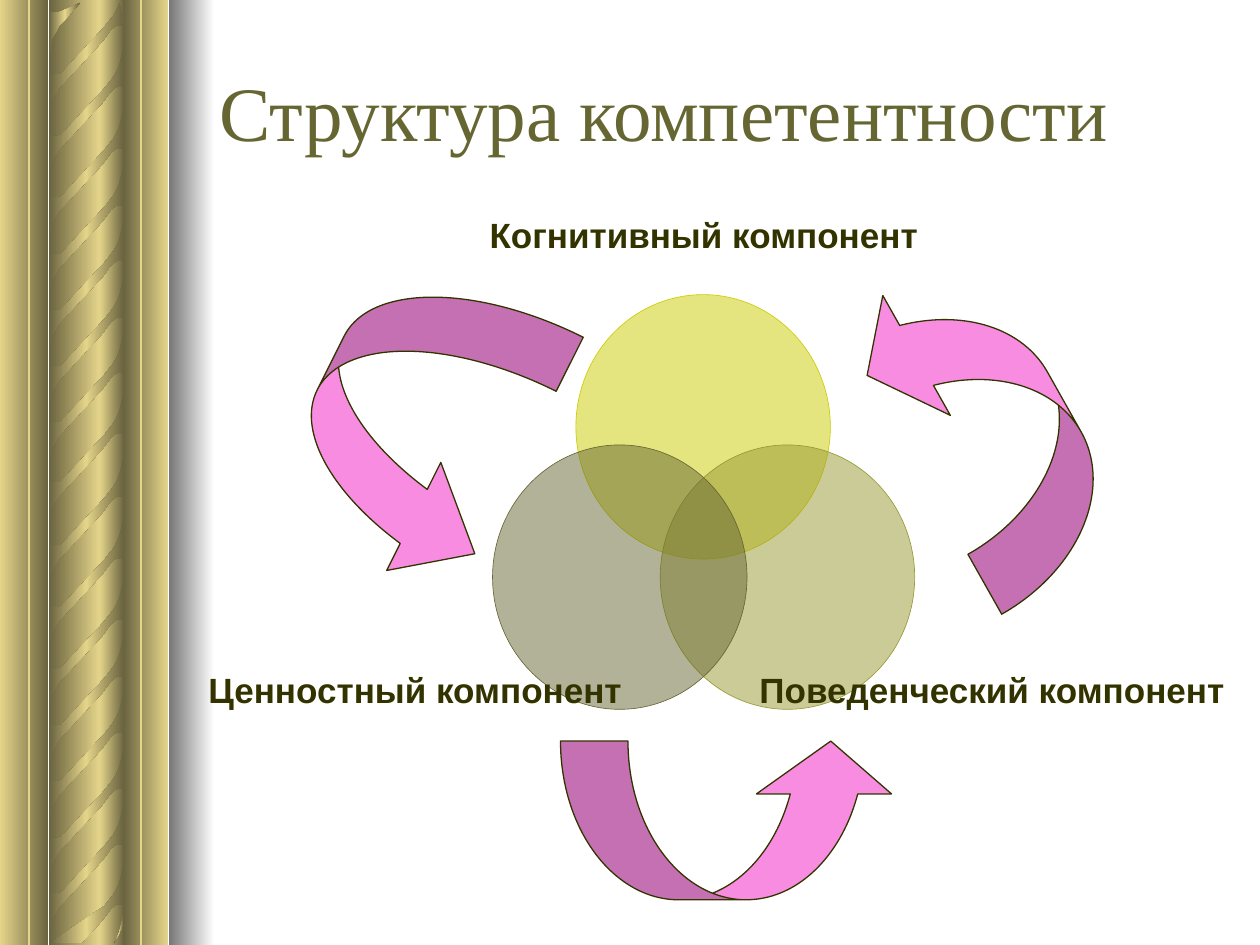
from copy import deepcopy

from lxml import etree
from pptx import Presentation
from pptx.dml.color import RGBColor
from pptx.enum.shapes import MSO_CONNECTOR, MSO_SHAPE
from pptx.enum.text import MSO_ANCHOR, PP_ALIGN
from pptx.oxml.ns import qn
from pptx.util import Cm, Pt

RECTANGLE, ELLIPSE = MSO_SHAPE.RECTANGLE, MSO_SHAPE.OVAL
ARROW_UP, ARROW_RIGHT = MSO_SHAPE.CURVED_UP_ARROW, MSO_SHAPE.CURVED_RIGHT_ARROW
STRAIGHT = MSO_CONNECTOR.STRAIGHT
MIDDLE = MSO_ANCHOR.MIDDLE
LEFT, CENTER = PP_ALIGN.LEFT, PP_ALIGN.CENTER

COLORS = {
    "gold": "E5D58A", "bronze": "6A6340", "shade": "767676", "white": "FFFFFF",
    "title": "666633", "ink": "333300", "pink": "F88CE1",
    "lemon": "CCCC00", "olive": "999933", "moss": "666633",
}
SLIDE_WIDTH, SLIDE_HEIGHT = 25.4, 19.05

# Outline of one rope strand, in cm from its top left corner
STRAND = [
    (1.5, 0.23), (1.5, 0.84), (1.47, 0.81), (1.37, 0.81), (1.32, 0.84),
    (1.24, 0.91), (1.07, 1.14), (0.64, 1.6), (0.2, 2.08), (0.13, 2.21),
    (0.05, 2.36), (0.03, 2.57), (0, 2.84), (0, 1.6), (0, 1.73), (0.03, 1.78),
    (0.08, 1.8), (0.13, 1.8), (0.18, 1.8), (0.25, 1.78), (1.12, 0.84),
    (1.3, 0.61), (1.37, 0.48), (1.42, 0.36), (1.47, 0.15), (1.5, 0),
]
HALF_TOPS = [-0.3, 0.94, 2.18, 3.33, 4.45, 5.59, 6.71, 7.92]
STRAND_TOPS = [-1.55] + HALF_TOPS + [top + 9.5 for top in HALF_TOPS] + [18.42]


def color(name):
    return RGBColor.from_string(COLORS[name])


def set_gradient(shape, *names):
    """Fill with a left-to-right gradient of two or three evenly spaced colours."""
    shape.shadow.inherit = False
    shape.line.fill.background()
    shape.fill.gradient()
    shape.fill.gradient_angle = 0
    stop_list = shape.fill.gradient_stops[0]._gs.getparent()
    if len(names) == 3:
        stop_list.insert(1, deepcopy(stop_list[0]))
    for index, (stop, name) in enumerate(zip(shape.fill.gradient_stops, names)):
        stop.color.rgb = color(name)
        stop.position = index / (len(names) - 1)


def add_filled(slide, kind, box, fill, line, line_width):
    shape = slide.shapes.add_shape(kind, *(Cm(length) for length in box))
    shape.shadow.inherit = False
    shape.fill.solid()
    shape.fill.fore_color.rgb = color(fill)
    shape.line.color.rgb = color(line)
    shape.line.width = Pt(line_width)
    return shape


def add_text(slide, box, text, *, size, font, ink, bold=False, align=LEFT,
             wrap=True, margins=(0, 0)):
    """Add one line of text; without wrap it may run past both sides of its box."""
    shape = slide.shapes.add_shape(RECTANGLE, *(Cm(length) for length in box))
    shape.shadow.inherit = False
    shape.fill.background()
    shape.line.fill.background()
    frame = shape.text_frame
    frame.word_wrap = wrap
    frame.vertical_anchor = MIDDLE
    frame.margin_left = frame.margin_right = Cm(margins[0])
    frame.margin_top = frame.margin_bottom = Cm(margins[1])
    paragraph = frame.paragraphs[0]
    paragraph.alignment = align
    run = paragraph.add_run()
    run.text = text
    run.font.size = Pt(size)
    run.font.name = font
    run.font.bold = bold
    run.font.color.rgb = color(ink)


def add_strand(slide, left, top, lowest, highest):
    """Draw the part of one strand that lies within the column."""
    points = [(Cm(left + x), Cm(top + y)) for x, y in STRAND
              if lowest <= top + y <= highest]
    builder = slide.shapes.build_freeform(*points[0], scale=1.0)
    builder.add_line_segments(points[1:], close=True)
    set_gradient(builder.convert_to_shape(), "bronze", "gold", "bronze")


def add_column(slide, left, top, height):
    bands = [
        (2.01, 0.5, "gold", "bronze"), (0, 0.97, "gold", "bronze"),
        (0.99, 1.02, "bronze", "gold"), (2.49, 0.9, "bronze", "gold"),
        (3.4, 0.92, "shade", "white"),
    ]
    for offset, width, start, end in bands:
        band = slide.shapes.add_shape(
            RECTANGLE, Cm(left + offset), Cm(top), Cm(width), Cm(height))
        set_gradient(band, start, end)
    for strand_top in STRAND_TOPS:
        add_strand(slide, left + 0.99, top + strand_top, top, top + height)
    for offset in (0.58, 2.84):
        x = Cm(left + offset)
        groove = slide.shapes.add_connector(STRAIGHT, x, Cm(top), x, Cm(top + height))
        groove.line.color.rgb = color("gold")
        groove.line.width = Pt(1)
        etree.SubElement(groove._element.spPr, qn("a:effectLst"))


def add_venn(slide, left, top):
    components = [
        ("Когнитивный компонент", "lemon", (4.7, 1.88), (5.82, 0)),
        ("Поведенческий компонент", "olive", (6.4, 4.91), (11.63, 9.17)),
        ("Ценностный компонент", "moss", (3.02, 4.91), (0, 9.17)),
    ]
    for text, fill, (circle_x, circle_y), (label_x, label_y) in components:
        circle = add_filled(
            slide, ELLIPSE, (left + circle_x, top + circle_y, 5.13, 5.33),
            fill, fill, 0.37)
        fill_color = circle.fill._xPr.find(qn("a:solidFill"))[0]
        etree.SubElement(fill_color, qn("a:alpha"), val="50000")
        add_text(slide, (left + label_x, top + label_y, 2.92, 1.32), text,
                 size=20, font="Arial", ink="ink", bold=True, align=CENTER,
                 wrap=False)


def add_cycle_arrows(slide, left, top):
    arrows = [
        (ARROW_UP, (0, 1.27, 6.1, 4.32), 116.6, (0.282, 0.564, 0.333)),
        (ARROW_UP, (5.89, 9.81, 6.81, 3.2), 0, (0.425, 0.851, 0.333)),
        (ARROW_RIGHT, (12.88, 0, 3.2, 6.91), 150.6, (0.433, 0.866, 0.333)),
    ]
    for kind, (x, y, width, height), rotation, adjustments in arrows:
        arrow = add_filled(slide, kind, (left + x, top + y, width, height),
                           "pink", "ink", 0.75)
        arrow.rotation = rotation
        for index, value in enumerate(adjustments):
            arrow.adjustments[index] = value


def main():
    presentation = Presentation()
    presentation.slide_width = Cm(SLIDE_WIDTH)
    presentation.slide_height = Cm(SLIDE_HEIGHT)
    slide = presentation.slides.add_slide(presentation.slide_layouts[6])
    add_column(slide, 0, 0, SLIDE_HEIGHT)
    add_text(slide, (4.17, 0.64, 20.8, 3.18), "Структура компетентности",
             size=44, font="Times New Roman", ink="title", margins=(0.25, 0.13))
    add_venn(slide, 6.91, 4.06)
    add_cycle_arrows(slide, 5.41, 5.13)
    presentation.save("out.pptx")


if __name__ == "__main__":
    main()
